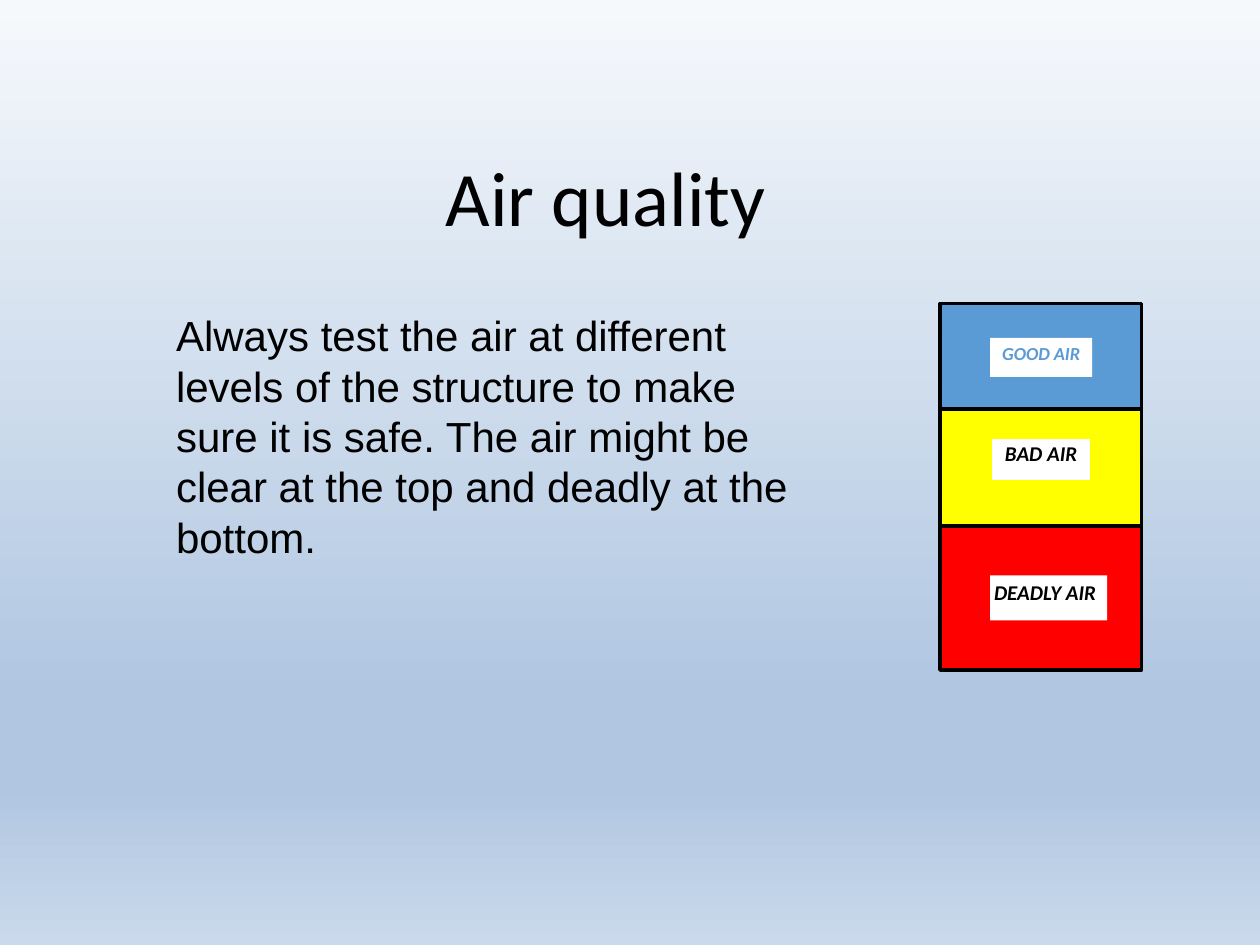
from dataclasses import dataclass
from typing import Optional

from lxml.etree import SubElement
from pptx import Presentation
from pptx.dml.color import RGBColor as Rgb
from pptx.enum.shapes import MSO_SHAPE as Preset
from pptx.enum.text import MSO_ANCHOR as Anchor, MSO_AUTO_SIZE as AutoSize, PP_ALIGN as Align
from pptx.oxml.ns import qn
from pptx.shapes.autoshape import Shape
from pptx.slide import Slide
from pptx.text.text import TextFrame
from pptx.util import Cm, Pt


@dataclass(frozen=True)
class Theme:
    """Colours, fonts and sizes of the slide."""
    black: str = "000000"
    white: str = "FFFFFF"
    good: str = "5B9BD5"
    bad: str = "FFFF00"
    deadly: str = "FF0000"
    sky: tuple = ((0, "F6F9FC"), (74, "B0C6E1"), (83, "B0C6E1"), (100, "CAD9EB"))
    heading_font: str = "Calibri"
    body_font: str = "Arial"
    title_size: float = 44
    body_size: float = 24
    label_size: float = 12
    small_label_size: float = 10.5
    outline: float = 2


THEME = Theme()
STACK_LEFT, STACK_TOP, STACK_WIDTH = 18.95, 6.12, 4.06
LABEL_LEFT, LABEL_INSET = 19.96, 0.08


@dataclass(frozen=True)
class AirLayer:
    """One band of air with its label; lengths in centimetres."""
    name: str
    fill: str
    height: float
    label_drop: float
    label_height: float
    label_width: float = 2.06
    label_color: str = THEME.black
    label_size: float = THEME.label_size
    label_outline: Optional[str] = None
    align: Align = Align.CENTER


LAYERS = (
    AirLayer("GOOD AIR", THEME.good, 2.13, 0.69, 0.79,
             label_color=THEME.good, label_size=THEME.small_label_size),
    AirLayer("BAD AIR", THEME.bad, 2.36, 0.56, 0.91, label_outline=THEME.bad),
    AirLayer("DEADLY AIR", THEME.deadly, 2.9, 0.99, 0.91, label_width=2.36, align=Align.LEFT),
)


def paint_sky(slide: Slide) -> None:
    """Fill the background with the vertical gradient."""
    fill = slide.background.fill
    fill.gradient()
    fill.gradient_angle = 270
    stops = next(slide.element.iter(qn("a:gsLst")))
    for stop in list(stops):
        stops.remove(stop)
    for percent, color in THEME.sky:
        stop = SubElement(stops, qn("a:gs"), pos=str(percent * 1000))
        SubElement(stop, qn("a:srgbClr"), val=color)


def write(frame: TextFrame, text: str, font: str, size: float, align: Align = Align.LEFT,
          color: str = THEME.black, emphasis: Optional[bool] = None) -> None:
    """Write one formatted run into the frame's first paragraph."""
    frame.word_wrap = True
    paragraph = frame.paragraphs[0]
    paragraph.alignment = align
    run = paragraph.add_run()
    run.text = text
    run.font.name, run.font.size = font, Pt(size)
    run.font.bold = run.font.italic = emphasis
    run.font.color.rgb = Rgb.from_string(color)


def add_block(slide: Slide, left: float, top: float, width: float, height: float,
              fill: str, outline: Optional[str]) -> Shape:
    """Draw a flat rectangle."""
    block = slide.shapes.add_shape(Preset.RECTANGLE, Cm(left), Cm(top), Cm(width), Cm(height))
    block.shadow.inherit = False
    block.fill.solid()
    block.fill.fore_color.rgb = Rgb.from_string(fill)
    if outline:
        block.line.color.rgb = Rgb.from_string(outline)
        block.line.width = Pt(THEME.outline)
    else:
        block.line.fill.background()
    return block


def add_layer(slide: Slide, layer: AirLayer, top: float) -> None:
    """Draw a band of air and the label on it."""
    add_block(slide, STACK_LEFT, top, STACK_WIDTH, layer.height, layer.fill, THEME.black)
    label = add_block(slide, LABEL_LEFT, top + layer.label_drop, layer.label_width,
                      layer.label_height, THEME.white, layer.label_outline)
    frame = label.text_frame
    frame.margin_left = frame.margin_right = Cm(LABEL_INSET)
    frame.margin_top = frame.margin_bottom = Cm(LABEL_INSET)
    frame.vertical_anchor = Anchor.TOP
    write(frame, layer.name, THEME.heading_font, layer.label_size, layer.align,
          layer.label_color, emphasis=True)


def main() -> None:
    """Build and save the slide."""
    deck = Presentation()
    deck.slide_width, deck.slide_height = Cm(25.4), Cm(19.05)
    slide = deck.slides.add_slide(deck.slide_layouts[5])
    paint_sky(slide)

    title = slide.shapes.title
    title.left, title.top, title.width, title.height = Cm(1.42), Cm(2.74), Cm(21.59), Cm(2.39)
    title.text_frame.vertical_anchor = Anchor.MIDDLE
    write(title.text_frame, "Air quality", THEME.heading_font, THEME.title_size, Align.CENTER)

    top = STACK_TOP
    for layer in LAYERS:
        add_layer(slide, layer, top)
        top += layer.height

    advice = slide.shapes.add_textbox(Cm(3.3), Cm(STACK_TOP), Cm(13.11), Cm(5.38))
    advice.text_frame.auto_size = AutoSize.SHAPE_TO_FIT_TEXT
    write(advice.text_frame,
          "Always test the air at different levels of the structure to make sure it is safe. "
          "The air might be clear at the top and deadly at the bottom.",
          THEME.body_font, THEME.body_size)

    deck.save("out.pptx")


if __name__ == "__main__":
    main()
